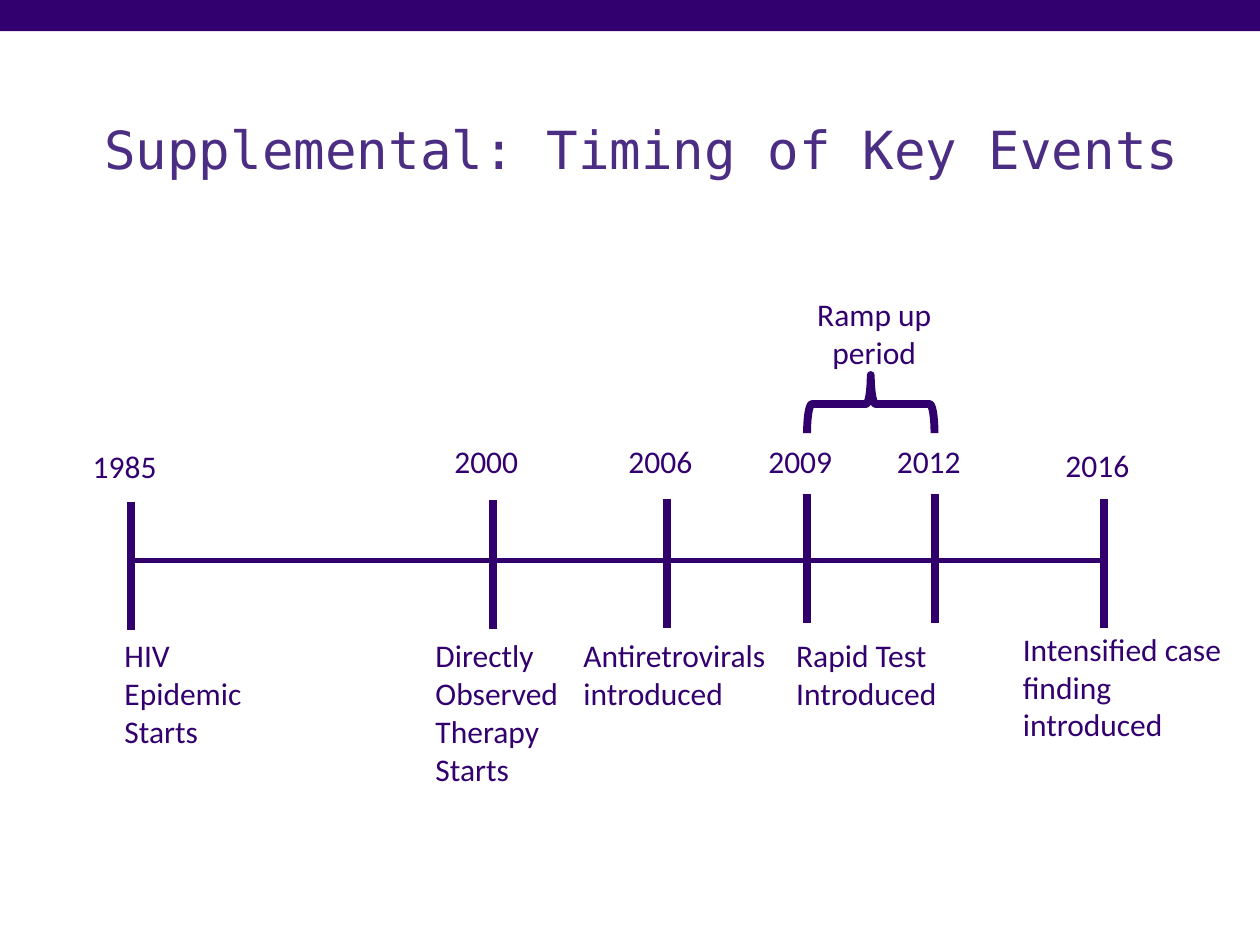
"""Build a timeline slide of key events from 1985 to 2016."""
from lxml import etree
from pptx import Presentation
from pptx import util as u
from pptx.dml.color import RGBColor
from pptx.enum import shapes, text
from pptx.oxml.ns import qn

PURPLE = RGBColor(0x33, 0x00, 0x6F)
LINE_PURPLE = RGBColor(0x32, 0x00, 0x6D)
TITLE_PURPLE = RGBColor(0x4B, 0x2E, 0x83)

AXIS_Y = 11.3
TICK_LENGTH = 2.59
YEAR_OFFSET = 1.02

prs = Presentation()
prs.slide_width, prs.slide_height = u.Cm(25.4), u.Cm(19.05)
slide = prs.slides.add_slide(prs.slide_layouts[6])


def add_text(words, left, top, width, height, size=18, font="Calibri", color=PURPLE,
             align=text.PP_ALIGN.LEFT, anchor=text.MSO_ANCHOR.TOP, spacing=1.0):
    box = slide.shapes.add_textbox(u.Cm(left), u.Cm(top), u.Cm(width), u.Cm(height))
    frame = box.text_frame
    frame.word_wrap = True
    frame.vertical_anchor = anchor
    paragraph = frame.paragraphs[0]
    paragraph.alignment = align
    paragraph.line_spacing = spacing
    run = paragraph.add_run()
    run.text = words
    run.font.size = u.Pt(size)
    run.font.name = font
    run.font.color.rgb = color


def add_line(x1, y1, x2, y2, weight):
    line = slide.shapes.add_connector(
        shapes.MSO_CONNECTOR.STRAIGHT, u.Cm(x1), u.Cm(y1), u.Cm(x2), u.Cm(y2))
    line.line.color.rgb = LINE_PURPLE
    line.line.width = u.Pt(weight)
    etree.SubElement(line._element.spPr, qn("a:effectLst"))


banner = slide.shapes.add_shape(
    shapes.MSO_SHAPE.RECTANGLE, 0, 0, prs.slide_width, u.Cm(0.63))
banner.shadow.inherit = False
banner.fill.solid()
banner.fill.fore_color.rgb = PURPLE
banner.line.fill.background()

add_text("Supplemental: Timing of Key Events", 1.85, 1.04, 22.73, 2.74, size=30,
         font="DejaVu Sans Mono", color=TITLE_PURPLE,
         anchor=text.MSO_ANCHOR.BOTTOM, spacing=0.9)

milestones = [
    ("1985", 2.64, 10.11, 8.89),
    ("2000", 9.93, 10.08, 8.79),
    ("2006", 13.44, 10.06, 8.79),
    ("2009", 16.26, 9.96, 8.79),
    ("2012", 18.85, 9.96, 8.79),
    ("2016", 22.25, 10.06, 8.86),
]
add_line(milestones[0][1], AXIS_Y, milestones[-1][1], AXIS_Y, 3)
for year, x, tick_top, year_top in milestones:
    add_line(x, tick_top, x, tick_top + TICK_LENGTH, 4.5)
    add_text(year, x - YEAR_OFFSET, year_top, 2.01, 1.02)

events = [
    ("HIV Epidemic Starts", 2.26, 12.7, 3.66, 2.57),
    ("Directly Observed Therapy Starts", 8.53, 12.7, 3.66, 3.33),
    ("Antiretrovirals introduced", 11.51, 12.7, 4.55, 1.8),
    ("Rapid Test Introduced", 15.8, 12.7, 3.89, 1.8),
    ("Intensified case finding introduced", 20.37, 12.57, 4.55, 2.57),
]
for event, left, top, width, height in events:
    add_text(event, left, top, width, height)

ramp_up = slide.shapes.add_shape(
    shapes.MSO_SHAPE.RIGHT_BRACE, u.Cm(16.97), u.Cm(6.86), u.Cm(1.17), u.Cm(2.57))
ramp_up.rotation = 270
ramp_up.shadow.inherit = False
ramp_up.fill.background()
ramp_up.line.color.rgb = LINE_PURPLE
ramp_up.line.width = u.Pt(4.5)
add_text("Ramp up period", 15.39, 5.82, 4.47, 1.8, align=text.PP_ALIGN.CENTER)

prs.save("out.pptx")
